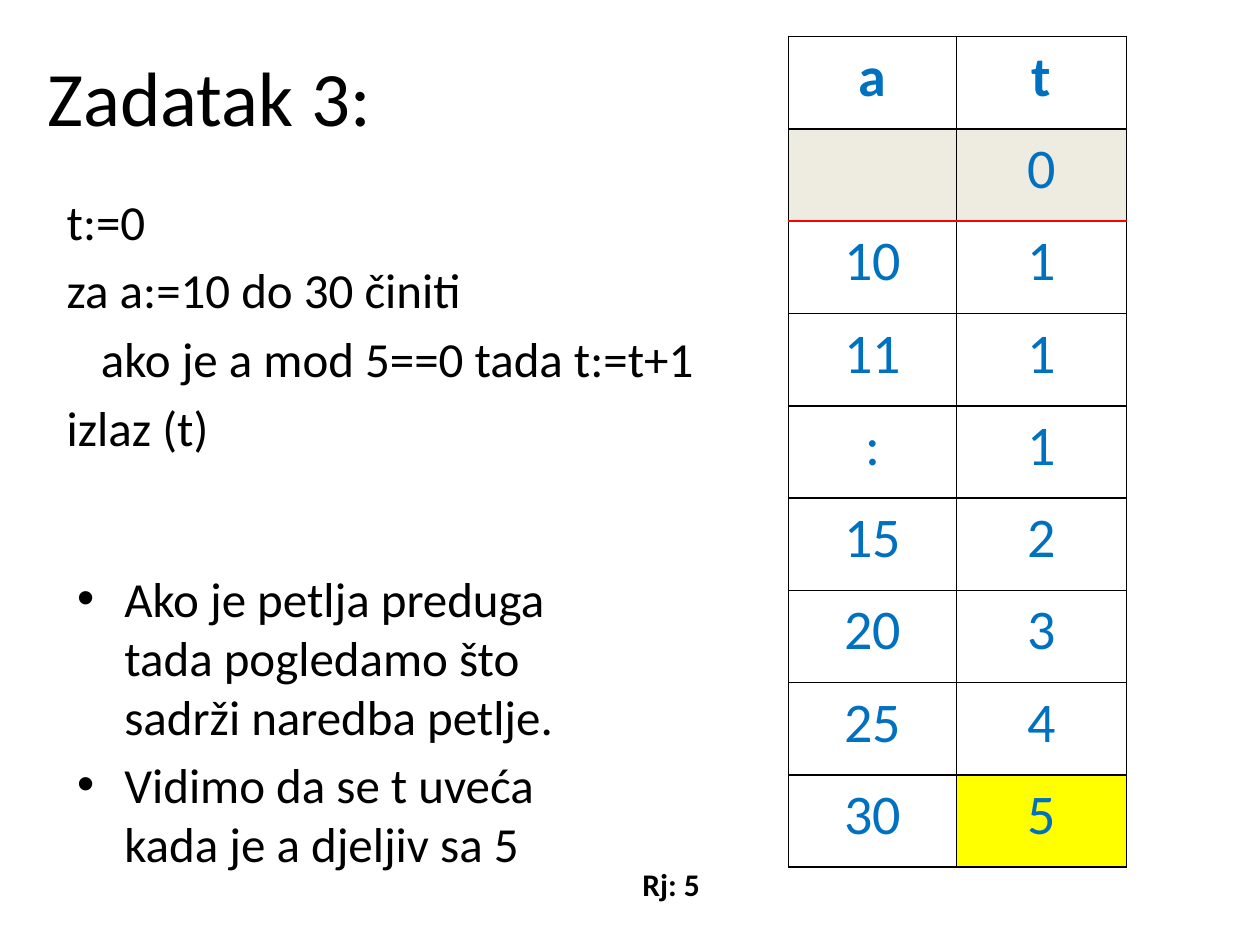
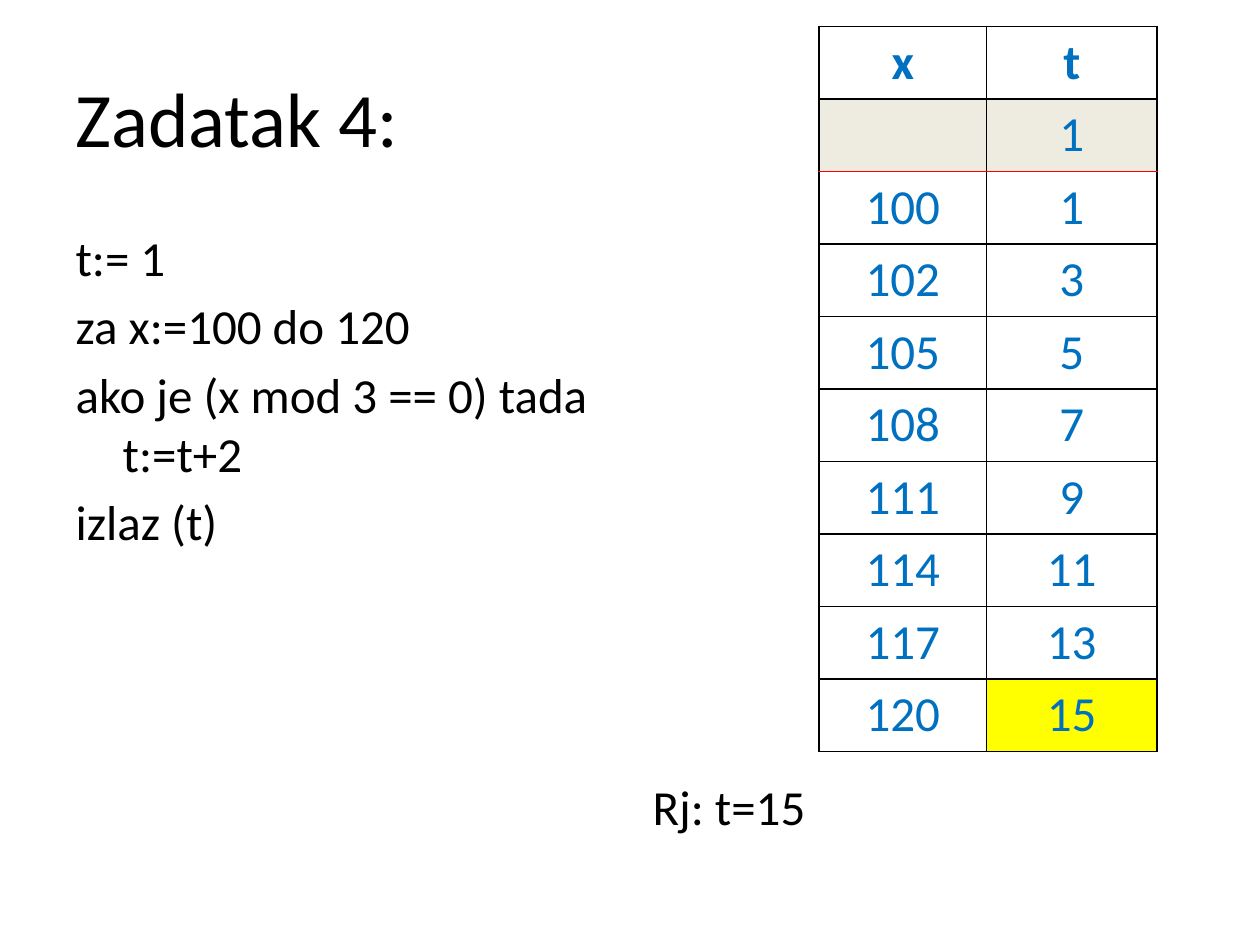
import dataclasses

import lxml.etree
import pptx
import pptx.dml.color
import pptx.enum.text
import pptx.oxml.ns
import pptx.util

Cm = pptx.util.Cm
Pt = pptx.util.Pt
qn = pptx.oxml.ns.qn
ALIGN = pptx.enum.text.PP_ALIGN
ANCHOR = pptx.enum.text.MSO_ANCHOR
TWO_CONTENT_LAYOUT = 3


@dataclasses.dataclass(frozen=True)
class Theme:
    font: str = "Calibri"
    ink: str = "000000"
    value: str = "0070C0"
    paper: str = "FFFFFF"
    start_fill: str = "EEECE1"
    result_fill: str = "FFFF00"
    start_line: str = "FF0000"
    title_size: int = 44
    body_size: int = 28
    note_size: int = 18
    border: float = 1
    hanging: float = 0.95
    nested: float = 0.69


THEME = Theme()


def rgb(color):
    return pptx.dml.color.RGBColor.from_string(color)


def format_run(run, size, color=THEME.ink, bold=False):
    values = {"name": THEME.font, "size": Pt(size), "bold": bold}
    for name, value in values.items():
        setattr(run.font, name, value)
    run.font.color.rgb = rgb(color)


def place(shape, box):
    for name, length in zip(("left", "top", "width", "height"), box):
        setattr(shape, name, Cm(length))


def write_lines(shape, box, lines, size):
    """Place a text shape and give it one paragraph per line."""
    place(shape, box)
    frame = shape.text_frame
    frame.word_wrap = True
    frame.auto_size = pptx.enum.text.MSO_AUTO_SIZE.NONE
    frame.text = "\n".join(lines)
    for paragraph in frame.paragraphs:
        paragraph.alignment = ALIGN.LEFT
        format_run(paragraph.runs[0], size)
    return frame


def add_title(shape, box, text):
    frame = write_lines(shape, box, [text], THEME.title_size)
    frame.vertical_anchor = ANCHOR.MIDDLE


def add_code(shape, box, lines, nested=()):
    """Write lines without bullets; those numbered in nested start further in."""
    frame = write_lines(shape, box, lines, THEME.body_size)
    for index, paragraph in enumerate(frame.paragraphs):
        start = THEME.nested if index in nested else 0
        properties = paragraph._p.get_or_add_pPr()
        properties.set("marL", str(Cm(THEME.hanging)))
        properties.set("indent", str(Cm(start - THEME.hanging)))
        lxml.etree.SubElement(properties, qn("a:buNone"))


def set_borders(cell, colors):
    properties = cell._tc.get_or_add_tcPr()
    for side, color in colors.items():
        line = lxml.etree.SubElement(
            properties, qn(f"a:ln{side}"), w=str(Pt(THEME.border)))
        fill = lxml.etree.SubElement(line, qn("a:solidFill"))
        lxml.etree.SubElement(fill, qn("a:srgbClr"), val=color)


def add_trace_table(slide, left, top, row_height, size, rows):
    """Tabulate variable values: names, start values, steps, then the result."""
    widths = (3.38, 3.43)
    table = slide.shapes.add_table(
        len(rows), len(widths), Cm(left), Cm(top),
        Cm(sum(widths)), Cm(row_height * len(rows))).table
    table.horz_banding = False
    for column, width in zip(table.columns, widths):
        column.width = Cm(width)
    last_cell = (len(rows) - 1, len(widths) - 1)
    for row_index, row in enumerate(rows):
        for column_index, text in enumerate(row):
            cell = table.cell(row_index, column_index)
            set_borders(cell, {
                "L": THEME.ink,
                "R": THEME.ink,
                "T": THEME.start_line if row_index == 2 else THEME.ink,
                "B": THEME.start_line if row_index == 1 else THEME.ink,
            })
            fill = THEME.start_fill if row_index == 1 else THEME.paper
            if (row_index, column_index) == last_cell:
                fill = THEME.result_fill
            cell.fill.solid()
            cell.fill.fore_color.rgb = rgb(fill)
            if text:
                cell.text = text
                paragraph = cell.text_frame.paragraphs[0]
                paragraph.alignment = ALIGN.CENTER
                format_run(paragraph.runs[0], size, THEME.value, row_index == 0)


def add_task_slide(presentation):
    layout = presentation.slide_layouts[TWO_CONTENT_LAYOUT]
    slide = presentation.slides.add_slide(layout)
    return slide, *slide.placeholders


def build_task_three(presentation):
    slide, title, code, remarks = add_task_slide(presentation)
    add_title(title, (0.71, 0.33, 22.86, 3.18), "Zadatak 3:")
    add_code(code, (1.09, 3.73, 13.79, 12.57), [
        "t:=0",
        "za a:=10 do 30 činiti",
        "ako je a mod 5==0 tada t:=t+1",
        "izlaz (t)",
    ], nested={2})
    write_lines(remarks, (1.3, 11.33, 11.23, 6.6), [
        "Ako je petlja preduga tada pogledamo što sadrži naredba petlje.",
        "Vidimo da se t uveća kada je a djeljiv sa 5",
    ], THEME.body_size)
    add_trace_table(slide, 15.9, 0.74, 1.86, 32, [
        ("a", "t"), ("", "0"), ("10", "1"), ("11", "1"), (":", "1"),
        ("15", "2"), ("20", "3"), ("25", "4"), ("30", "5"),
    ])
    answer = slide.shapes.add_textbox(0, 0, 0, 0)
    frame = write_lines(answer, (12.7, 17.32, 2.21, 1.02), ["Rj: 5"],
                        THEME.note_size)
    frame.paragraphs[0].runs[0].font.bold = True


def build_task_four(presentation):
    slide, title, code, answer = add_task_slide(presentation)
    add_title(title, (1.27, 0.76, 22.86, 3.18), "Zadatak 4:")
    add_code(code, (1.27, 4.45, 11.23, 12.57), [
        "t:= 1",
        "za x:=100 do 120",
        "ako je (x mod 3 == 0) tada t:=t+2",
        "izlaz (t)",
    ])
    add_code(answer, (12.9, 15.52, 11.23, 1.6), ["Rj: t=15"])
    add_trace_table(slide, 16.51, 0.53, 1.46, 28, [
        ("x", "t"), ("", "1"), ("100", "1"), ("102", "3"), ("105", "5"),
        ("108", "7"), ("111", "9"), ("114", "11"), ("117", "13"),
        ("120", "15"),
    ])


def main():
    presentation = pptx.Presentation()
    presentation.slide_width = Cm(25.4)
    presentation.slide_height = Cm(19.05)
    build_task_three(presentation)
    build_task_four(presentation)
    presentation.save("out.pptx")


if __name__ == "__main__":
    main()
